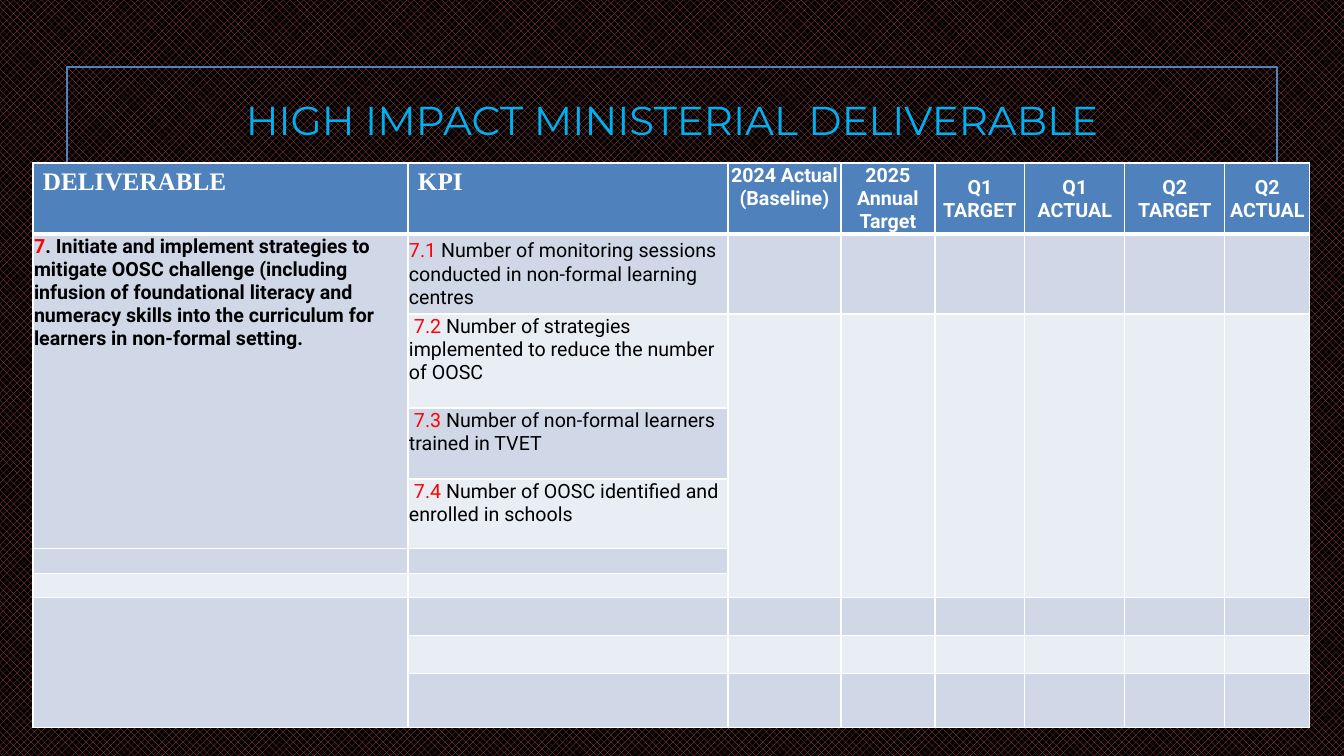
from lxml import etree
from pptx import Presentation
from pptx.dml.color import RGBColor
from pptx.enum.dml import MSO_PATTERN
from pptx.enum.shapes import MSO_SHAPE
from pptx.enum.text import MSO_ANCHOR, MSO_AUTO_SIZE, PP_ALIGN
from pptx.oxml.ns import qn
from pptx.util import Emu, Pt

TOP, MIDDLE = MSO_ANCHOR.TOP, MSO_ANCHOR.MIDDLE
LEFT, CENTER = PP_ALIGN.LEFT, PP_ALIGN.CENTER
RECTANGLE = MSO_SHAPE.RECTANGLE
DOTTED = MSO_PATTERN.PERCENT_50
NO_AUTOFIT = MSO_AUTO_SIZE.NONE

COLORS = {
    "black": "000000", "white": "FFFFFF", "red": "FF0000", "brick": "C0504D",
    "blue": "4F81BD", "sky": "00B0F0", "odd": "D0D8E8", "even": "E9EDF4",
}
BODY_FONT = "Roboto"
TITLE_FONT = "Montserrat"
HEADING_FONT = "Times New Roman"

COLUMN_WIDTHS = [375, 320, 113, 94, 90, 100, 100, 85]
ROW_HEIGHTS = [71, 80, 94, 71, 70, 25, 24, 38, 38, 54]
MAIN_HEADINGS = ["DELIVERABLE", "KPI"]
PERIOD_HEADINGS = [
    ("2024 Actual (Baseline)", TOP), ("2025 Annual Target", TOP),
    ("Q1 TARGET", MIDDLE), ("Q1 ACTUAL", MIDDLE),
    ("Q2 TARGET", MIDDLE), ("Q2 ACTUAL", MIDDLE),
]
DELIVERABLE = (
    "7", ". Initiate and implement strategies to mitigate OOSC challenge "
    "(including infusion of foundational literacy and numeracy skills into "
    "the curriculum for learners in non-formal setting.")
KPIS = [
    ("7.1", " Number of monitoring sessions conducted in non-formal learning centres"),
    ("7.2", " Number of strategies implemented to reduce the number of OOSC"),
    ("7.3", " Number of non-formal learners trained in TVET"),
    ("7.4", " Number of OOSC identified and enrolled in schools"),
]


def px(length):
    return Emu(round(length * 914400 / 100.8))


def rgb(name):
    return RGBColor.from_string(COLORS[name])


def add_run(paragraph, text, color, size=14, font=BODY_FONT, bold=False):
    run = paragraph.add_run()
    run.text = text
    run.font.name = font
    run.font.size = Pt(size)
    run.font.bold = bold
    run.font.color.rgb = rgb(color)


def set_background(slide):
    fill = slide.background.fill
    fill.patterned()
    fill.pattern = DOTTED
    fill.fore_color.rgb = rgb("brick")
    fill.back_color.rgb = rgb("black")


def add_frame(slide, left, top, width, height):
    frame = slide.shapes.add_shape(
        RECTANGLE, px(left), px(top), px(width), px(height))
    frame.shadow.inherit = False
    frame.fill.background()
    frame.line.color.rgb = rgb("blue")
    frame.line.width = Pt(1.25)


def set_title(slide, text, left, top, width, height):
    title = slide.shapes.title
    title.left, title.top = px(left), px(top)
    title.width, title.height = px(width), px(height)
    frame = title.text_frame
    frame.word_wrap = True
    frame.auto_size = NO_AUTOFIT
    frame.vertical_anchor = MIDDLE
    paragraph = frame.paragraphs[0]
    paragraph.alignment = CENTER
    add_run(paragraph, text, "sky", 28.8, TITLE_FONT)


def set_border(cell, side, points):
    border = etree.SubElement(
        cell._tc.get_or_add_tcPr(), qn(f"a:ln{side}"), w=str(Pt(points)))
    fill = etree.SubElement(border, qn("a:solidFill"))
    etree.SubElement(fill, qn("a:srgbClr"), val=COLORS["white"])


def style_cell(cell, row):
    for side in "LRTB":
        header_edge = (row, side) in ((0, "B"), (1, "T"))
        set_border(cell, side, 3 if header_edge else 1)
    cell.fill.solid()
    band = "odd" if row % 2 else "even"
    cell.fill.fore_color.rgb = rgb("blue" if row == 0 else band)
    cell.margin_left = cell.margin_right = cell.margin_top = px(1)
    cell.margin_bottom = 0
    # Small end mark keeps the thin empty rows at their height
    etree.SubElement(cell.text_frame.paragraphs[0]._p, qn("a:endParaRPr"), sz="1000")


def fill_cell(cell, parts, anchor=TOP, align=LEFT, **font):
    cell.vertical_anchor = anchor
    paragraph = cell.text_frame.paragraphs[0]
    paragraph.alignment = align
    for text, color in parts:
        add_run(paragraph, text, color, **font)
    return paragraph


def add_grid(slide, left, top):
    table = slide.shapes.add_table(
        len(ROW_HEIGHTS), len(COLUMN_WIDTHS), px(left), px(top),
        px(sum(COLUMN_WIDTHS)), px(sum(ROW_HEIGHTS))).table
    for column, width in zip(table.columns, COLUMN_WIDTHS):
        column.width = px(width)
    for index, (row, height) in enumerate(zip(table.rows, ROW_HEIGHTS)):
        row.height = px(height)
        for cell in row.cells:
            style_cell(cell, index)
    return table


def merge_down(table, column, first, last):
    table.cell(first, column).merge(table.cell(last, column))


def fill_headings(table):
    for column, text in enumerate(MAIN_HEADINGS):
        cell = table.cell(0, column)
        cell.margin_left = cell.margin_right = px(10)
        cell.margin_top = px(5)
        fill_cell(cell, [(text, "white")], size=18, font=HEADING_FONT, bold=True)
    for column, (text, anchor) in enumerate(PERIOD_HEADINGS, len(MAIN_HEADINGS)):
        fill_cell(table.cell(0, column), [(text, "white")], anchor, CENTER, bold=True)


def fill_deliverable(table):
    number, wording = DELIVERABLE
    fill_cell(table.cell(1, 0), [(number, "red"), (wording, "black")], bold=True)
    for row, (number, wording) in enumerate(KPIS, 1):
        paragraph = fill_cell(
            table.cell(row, 1), [(number, "red"), (wording, "black")],
            MIDDLE if row == 1 else TOP)
        if row > 1:
            paragraph._p.get_or_add_pPr().set("indent", str(px(5)))


def main():
    deck = Presentation()
    deck.slide_width, deck.slide_height = px(1344), px(756)
    slide = deck.slides.add_slide(deck.slide_layouts[5])

    # Backdrop and title
    set_background(slide)
    add_frame(slide, 67, 67, 1210, 622)
    set_title(slide, "HIGH IMPACT MINISTERIAL DELIVERABLE", 143, 74, 1058, 90)

    # Deliverables table
    table = add_grid(slide, 33, 163)
    merge_down(table, 0, 1, 4)
    merge_down(table, 0, 7, 9)
    for column in range(2, len(COLUMN_WIDTHS)):
        merge_down(table, column, 2, 6)
    fill_headings(table)
    fill_deliverable(table)

    deck.save("out.pptx")


if __name__ == "__main__":
    main()
